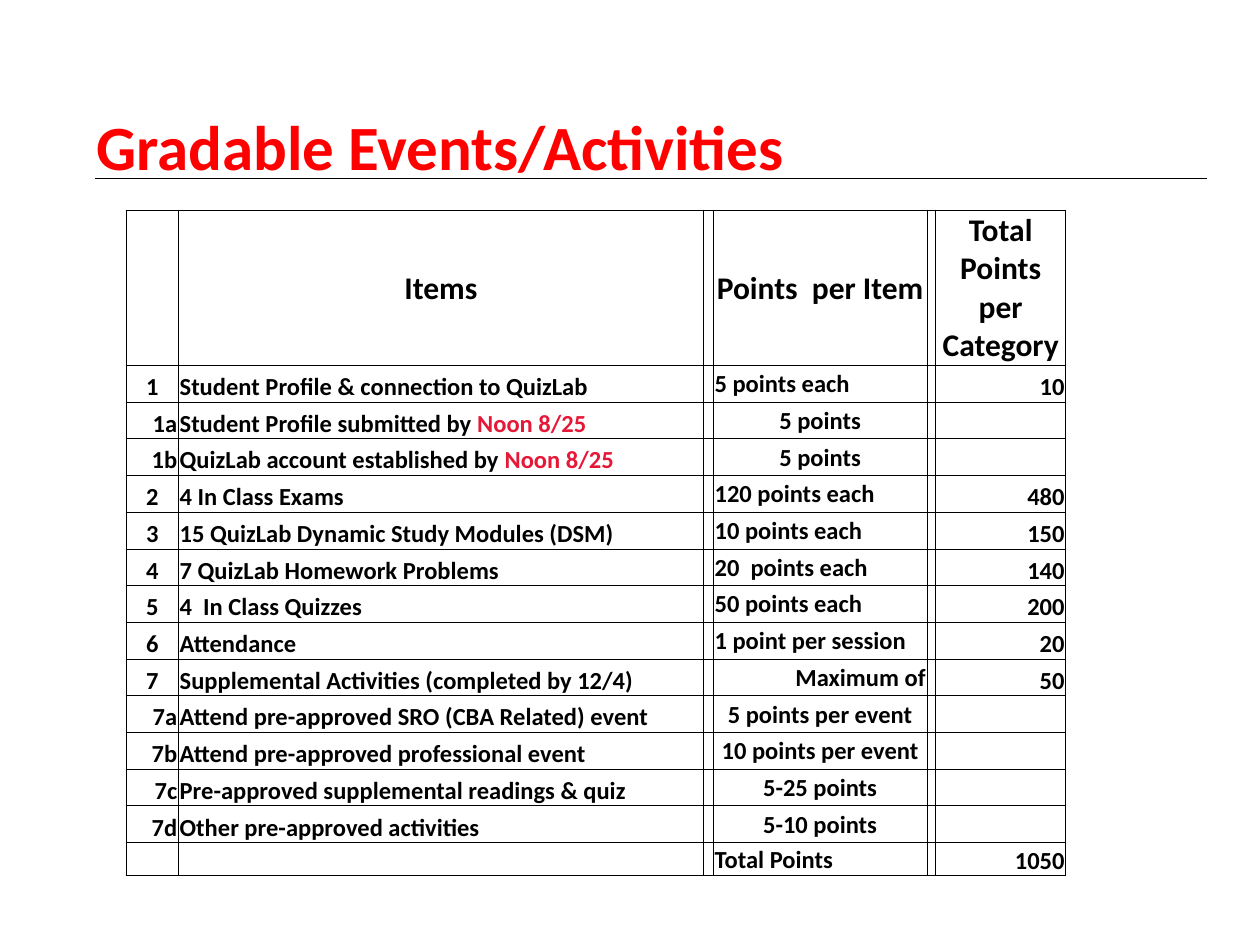
from lxml import etree
from pptx import Presentation
from pptx.dml import color
from pptx.enum import shapes, text
from pptx.oxml import ns
from pptx.util import Pt

LEFT, CENTER, RIGHT = text.PP_ALIGN.LEFT, text.PP_ALIGN.CENTER, text.PP_ALIGN.RIGHT
MIDDLE, BOTTOM = text.MSO_ANCHOR.MIDDLE, text.MSO_ANCHOR.BOTTOM
BLACK, RED, DEADLINE_RED = "000000", "FF0000", "E51837"


def write(frame, content, size=14, hue=BLACK, align=LEFT, accent="", spacing=None):
    """Fill a frame with one bold paragraph, ending in an optional red accent."""
    paragraph = frame.paragraphs[0]
    paragraph.alignment = align
    paragraph.line_spacing = spacing
    for words, run_hue in ((content, hue), (accent, DEADLINE_RED)):
        if words:
            run = paragraph.add_run()
            run.text = words
            run.font.name, run.font.size, run.font.bold = "Calibri", Pt(size), True
            run.font.color.rgb = color.RGBColor.from_string(run_hue)
    if not content:  # keeps an empty cell from stretching its row
        paragraph._p.get_or_add_endParaRPr().set("sz", str(size * 100))


def add_borders(cell, width=0.5, hue=BLACK):
    properties = cell._tc.get_or_add_tcPr()
    for position, side in enumerate(("lnL", "lnR", "lnT", "lnB")):
        line = etree.Element(ns.qn("a:" + side), w=str(Pt(width)))
        fill = etree.SubElement(line, ns.qn("a:solidFill"))
        etree.SubElement(fill, ns.qn("a:srgbClr"), val=hue)
        properties.insert(position, line)


presentation = Presentation()
presentation.slide_width, presentation.slide_height = Pt(720), Pt(540)
slide = presentation.slides.add_slide(presentation.slide_layouts[5])

# Title and the rule below it
title = slide.shapes.title
title.left, title.top, title.width, title.height = Pt(48), Pt(30), Pt(612), Pt(78)
title.text_frame.vertical_anchor = BOTTOM
title.text_frame.auto_size = text.MSO_AUTO_SIZE.NONE
write(title.text_frame, "Gradable Events/Activities", size=36, hue=RED, spacing=0.8)

rule = slide.shapes.add_connector(shapes.MSO_CONNECTOR.STRAIGHT, Pt(54), Pt(102), Pt(690), Pt(102))
rule.line.width = Pt(0.75)
rule.line.color.rgb = color.RGBColor.from_string(BLACK)
etree.SubElement(rule._element.spPr, ns.qn("a:effectLst"))

# Table: number, item, red deadline, points, alignment of points, total
headings = ["", "Items", "", "Points  per Item", "", "Total Points per Category"]
events = [
    ("1", "Student Profile & connection to QuizLab", "", "5 points each", LEFT, "10"),
    ("1a", "Student Profile submitted by ", "Noon 8/25", "5 points", CENTER, ""),
    ("1b", "QuizLab account established by ", "Noon 8/25", "5 points", CENTER, ""),
    ("2", "4 In Class Exams", "", "120 points each", LEFT, "480"),
    ("3", "15 QuizLab Dynamic Study Modules (DSM)", "", "10 points each", LEFT, "150"),
    ("4", "7 QuizLab Homework Problems", "", "20  points each", LEFT, "140"),
    ("5", "4  In Class Quizzes", "", "50 points each", LEFT, "200"),
    ("6", "Attendance", "", "1 point per session", LEFT, "20"),
    ("7", "Supplemental Activities (completed by 12/4)", "", "Maximum of", RIGHT, "50"),
    ("7a", "Attend pre-approved SRO (CBA Related) event", "", "5 points per event", CENTER, ""),
    ("7b", "Attend pre-approved professional event", "", "10 points per event", CENTER, ""),
    ("7c", "Pre-approved supplemental readings & quiz", "", "5-25 points", CENTER, ""),
    ("7d", "Other pre-approved activities", "", "5-10 points", CENTER, ""),
    ("", "", "", "Total Points", LEFT, "1050"),
]
column_widths = [30, 300, 5.7, 122, 5, 74.4]
row_heights = [88.8] + [21] * (len(events) - 1) + [18.9]

table = slide.shapes.add_table(
    len(row_heights), len(column_widths), Pt(72), Pt(120),
    Pt(sum(column_widths)), Pt(sum(row_heights))).table
table.first_row = table.horz_banding = False
for column, width in zip(table.columns, column_widths):
    column.width = Pt(width)
for row, height in zip(table.rows, row_heights):
    row.height = Pt(height)

for cell in table.iter_cells():
    cell.margin_left = cell.margin_right = cell.margin_top = Pt(0.7)
    cell.margin_bottom = 0
    cell.fill.background()
    add_borders(cell)

for cell, heading in zip(table.rows[0].cells, headings):
    cell.vertical_anchor = MIDDLE
    write(cell.text_frame, heading, size=18, align=CENTER)

for row, (number, item, deadline, points, points_align, total) in zip(list(table.rows)[1:], events):
    contents = [
        (number, CENTER if number.isdigit() else RIGHT, BOTTOM, ""),
        (item, LEFT, BOTTOM, deadline),
        ("", LEFT, BOTTOM, ""),
        (points, points_align, MIDDLE, ""),
        ("", LEFT, BOTTOM, ""),
        (total, RIGHT, BOTTOM, ""),
    ]
    for cell, (words, align, anchor, accent) in zip(row.cells, contents):
        cell.vertical_anchor = anchor
        write(cell.text_frame, words, align=align, accent=accent)

presentation.save("out.pptx")
